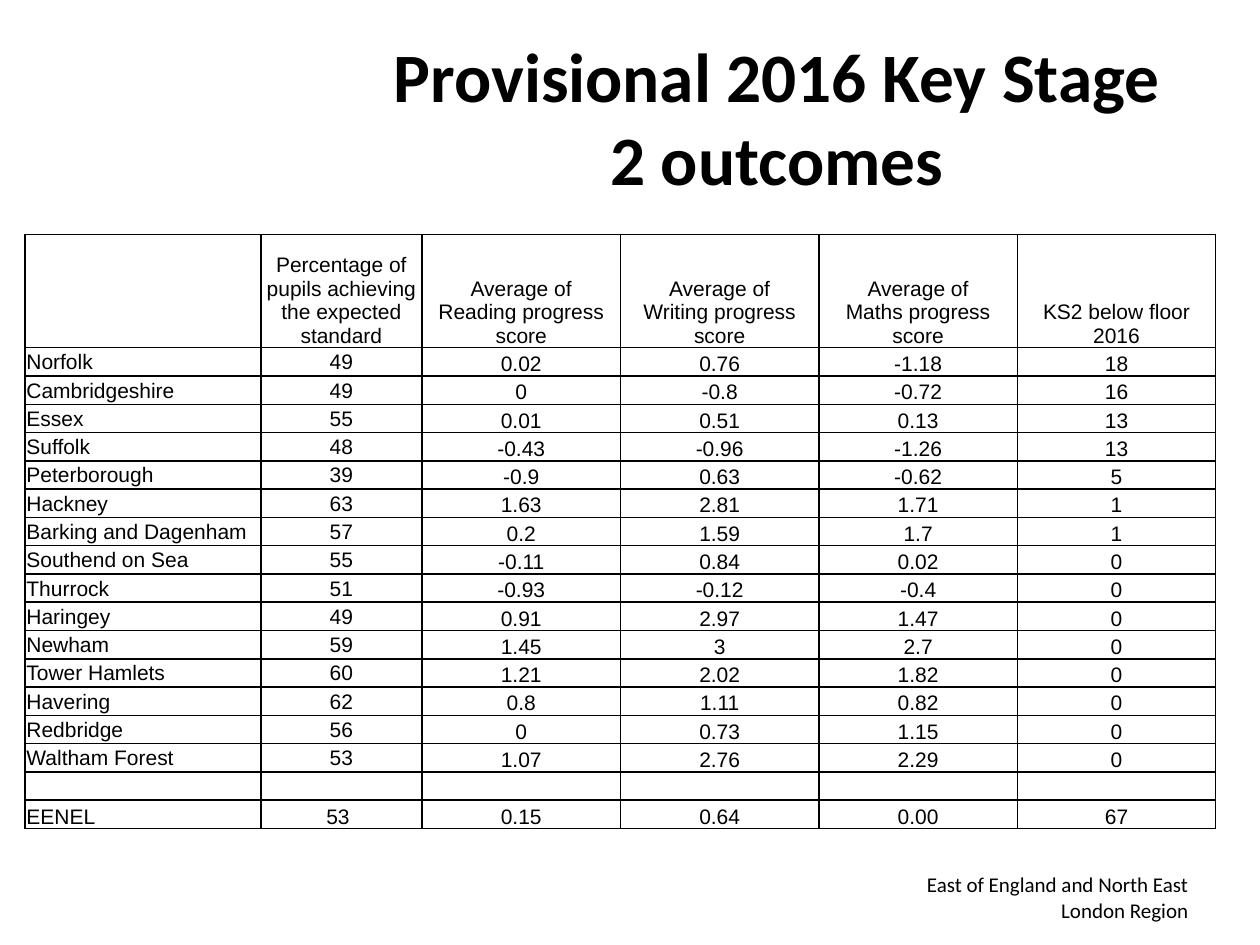
from dataclasses import dataclass

import lxml.etree
import pptx
import pptx.dml.color
import pptx.enum.text
import pptx.oxml.ns
import pptx.table
import pptx.util

Inches = pptx.util.Inches
ALIGN = pptx.enum.text.PP_ALIGN
ANCHOR = pptx.enum.text.MSO_ANCHOR
COLORS = {"text": "000000", "border": "000000"}
TABLE_SIZE = 12

LEFT, TOP, WIDTH, HEIGHT = 0.2, 1.86, 9.45, 4.72
NAME_WIDTH, PERCENT_WIDTH, HEADER_HEIGHT = 1.87, 1.28, 0.9
TOTAL_INDENT = 0.52


@dataclass
class Label:
    text: str
    left: float
    top: float
    width: float
    height: float
    size: float
    align: ALIGN
    bold: bool = False


@dataclass
class Outcome:
    area: str
    expected: str
    reading: str
    writing: str
    maths: str
    below_floor: str

    def values(self) -> list[str]:
        return [self.area, self.expected, self.reading, self.writing, self.maths, self.below_floor]


LABELS = [
    Label("East of England and North East London Region", 7.2, 6.92, 2.33, 0.4, 12, ALIGN.RIGHT),
    Label("Provisional 2016 Key Stage 2 outcomes", 2.83, 0.3, 6.67, 1.25, 39.6, ALIGN.CENTER, True),
]
HEADER = Outcome(
    "",
    "Percentage of pupils achieving the expected standard",
    "Average of\nReading progress score",
    "Average of\nWriting progress score",
    "Average of\nMaths progress score",
    "KS2 below floor 2016",
)
AREAS = [
    Outcome("Norfolk", "49", "0.02", "0.76", "-1.18", "18"),
    Outcome("Cambridgeshire", "49", "0", "-0.8", "-0.72", "16"),
    Outcome("Essex", "55", "0.01", "0.51", "0.13", "13"),
    Outcome("Suffolk", "48", "-0.43", "-0.96", "-1.26", "13"),
    Outcome("Peterborough", "39", "-0.9", "0.63", "-0.62", "5"),
    Outcome("Hackney", "63", "1.63", "2.81", "1.71", "1"),
    Outcome("Barking and Dagenham", "57", "0.2", "1.59", "1.7", "1"),
    Outcome("Southend on Sea", "55", "-0.11", "0.84", "0.02", "0"),
    Outcome("Thurrock", "51", "-0.93", "-0.12", "-0.4", "0"),
    Outcome("Haringey", "49", "0.91", "2.97", "1.47", "0"),
    Outcome("Newham", "59", "1.45", "3", "2.7", "0"),
    Outcome("Tower Hamlets", "60", "1.21", "2.02", "1.82", "0"),
    Outcome("Havering", "62", "0.8", "1.11", "0.82", "0"),
    Outcome("Redbridge", "56", "0", "0.73", "1.15", "0"),
    Outcome("Waltham Forest", "53", "1.07", "2.76", "2.29", "0"),
]
SPACER = Outcome("", "", "", "", "", "")
TOTAL = Outcome("EENEL", "53", "0.15", "0.64", "0.00", "67")


def add_run(p, text: str, font: str, size: float, bold: bool = False) -> None:
    r = p.add_run()
    r.text = text
    r.font.name = font
    r.font.size = pptx.util.Pt(size)
    r.font.bold = bold
    r.font.color.rgb = pptx.dml.color.RGBColor.from_string(COLORS["text"])


def add_label(slide, label: Label) -> None:
    box = map(Inches, (label.left, label.top, label.width, label.height))
    tf = slide.shapes.add_textbox(*box).text_frame
    tf.word_wrap = True
    tf.vertical_anchor = ANCHOR.MIDDLE
    p = tf.paragraphs[0]
    p.alignment = label.align
    add_run(p, label.text, "Calibri", label.size, label.bold)


def add_borders(cell: pptx.table._Cell) -> None:
    qn = pptx.oxml.ns.qn
    tc_pr = cell._tc.get_or_add_tcPr()
    for i, side in enumerate(("lnL", "lnR", "lnT", "lnB")):
        ln = lxml.etree.Element(qn(f"a:{side}"), w=str(pptx.util.Pt(1)))
        fill = lxml.etree.SubElement(ln, qn("a:solidFill"))
        lxml.etree.SubElement(fill, qn("a:srgbClr"), val=COLORS["border"])
        tc_pr.insert(i, ln)


def fill_cell(cell: pptx.table._Cell, text: str, align: ALIGN, anchor: ANCHOR) -> None:
    cell.fill.background()
    add_borders(cell)
    cell.margin_left = cell.margin_right = cell.margin_top = Inches(0.01)
    cell.margin_bottom = 0
    cell.vertical_anchor = anchor
    tf = cell.text_frame
    for i, line in enumerate(text.split("\n")):
        p = tf.paragraphs[0] if i == 0 else tf.add_paragraph()
        p.alignment = align
        if line:
            add_run(p, line, "Arial", TABLE_SIZE)
        else:  # an empty cell would otherwise stretch its row to the default size
            end = pptx.oxml.ns.qn("a:endParaRPr")
            lxml.etree.SubElement(p._p, end, sz=str(TABLE_SIZE * 100))


def add_outcomes(slide) -> None:
    rows = [HEADER, *AREAS, SPACER, TOTAL]
    columns = len(HEADER.values())
    box = map(Inches, (LEFT, TOP, WIDTH, HEIGHT))
    table = slide.shapes.add_table(len(rows), columns, *box).table
    table.first_row = table.horz_banding = False

    score_width = (WIDTH - NAME_WIDTH - PERCENT_WIDTH) / (columns - 2)
    for c, column in enumerate(table.columns):
        column.width = Inches((NAME_WIDTH, PERCENT_WIDTH)[c] if c < 2 else score_width)
    row_height = (HEIGHT - HEADER_HEIGHT) / (len(rows) - 1)
    for r, row in enumerate(table.rows):
        row.height = Inches(row_height if r else HEADER_HEIGHT)

    for r, outcome in enumerate(rows):
        for c, text in enumerate(outcome.values()):
            left = c == 0 or (outcome is TOTAL and c == 1)
            middle = c < 2 and outcome in AREAS
            fill_cell(
                table.cell(r, c),
                text,
                ALIGN.LEFT if left else ALIGN.CENTER,
                ANCHOR.MIDDLE if middle else ANCHOR.BOTTOM,
            )
    table.cell(len(rows) - 1, 1).margin_left = Inches(TOTAL_INDENT)


def main() -> None:
    prs = pptx.Presentation()
    prs.slide_width, prs.slide_height = Inches(10), Inches(7.5)
    slide = prs.slides.add_slide(prs.slide_layouts[6])
    for label in LABELS:
        add_label(slide, label)
    add_outcomes(slide)
    prs.save("out.pptx")


if __name__ == "__main__":
    main()
